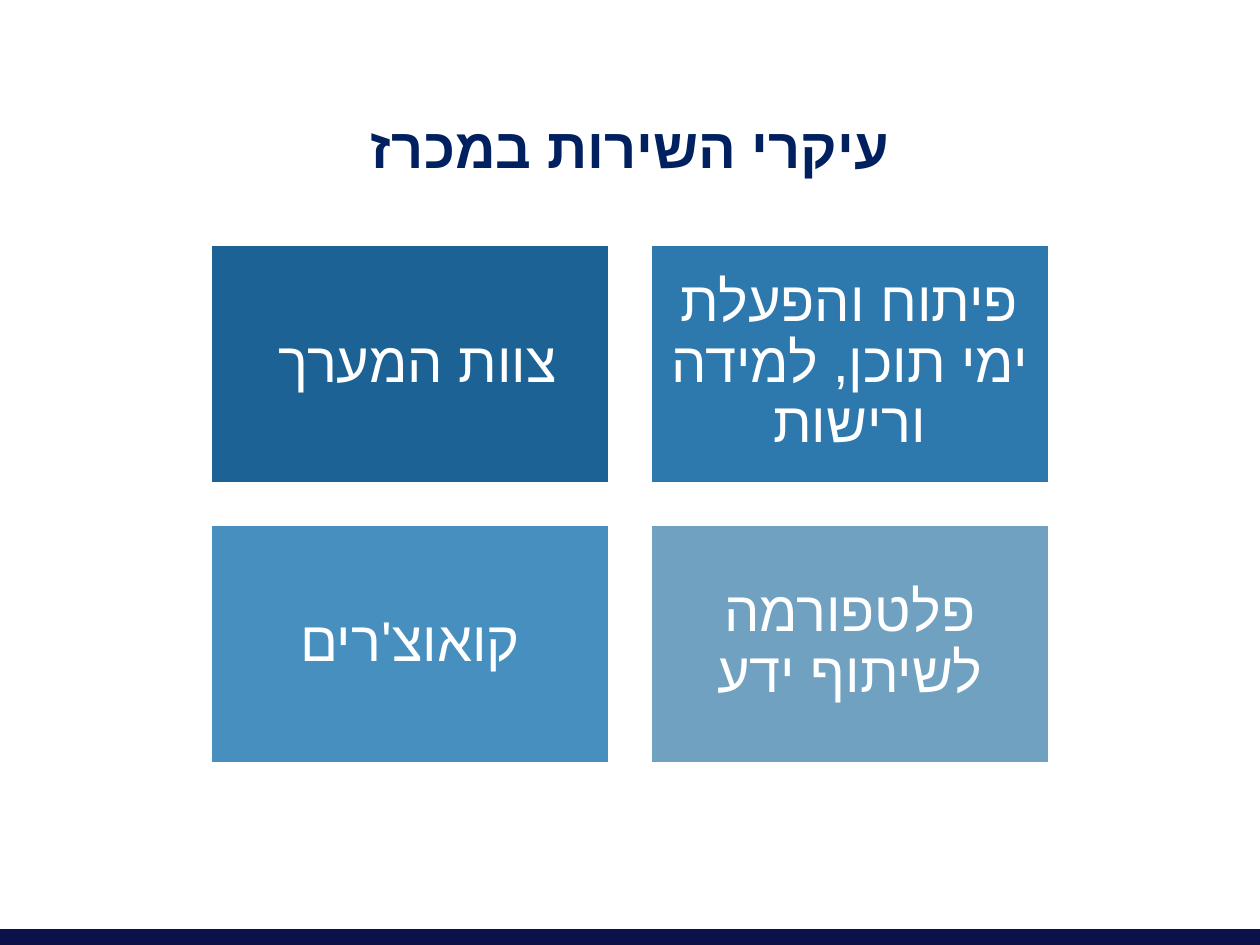
"""Builds a slide with a title and a two-by-two grid of service tiles."""
from dataclasses import dataclass

from lxml import etree
from pptx import Presentation
from pptx.dml.color import RGBColor
from pptx.enum.shapes import MSO_SHAPE
from pptx.enum.text import MSO_ANCHOR, PP_ALIGN
from pptx.oxml.ns import qn
from pptx.util import Inches, Pt

RECT = MSO_SHAPE.RECTANGLE
CENTER = PP_ALIGN.CENTER
TOP, MIDDLE = MSO_ANCHOR.TOP, MSO_ANCHOR.MIDDLE


@dataclass(frozen=True)
class Theme:
    """Holds the colours, fonts and type size."""
    font: str = "Roboto"
    hebrew: str = "Arial"
    size: int = 32
    title: str = "002060"
    bar: str = "0B1249"
    white: str = "FFFFFF"


THEME = Theme()
TILES = [
    ("צוות המערך ", "1C6294"),
    ("פיתוח והפעלת ימי תוכן, למידה ורישות", "2D79AD"),
    ("קואוצ'רים", "468FBF"),
    ("פלטפורמה לשיתוף ידע", "70A1C0"),
]
COLS = 2
LEFT, TOP_ROW = 1.67, 1.94
WIDTH, HEIGHT = 3.17, 1.9
GAP = 0.32


def add_text(frame, text, color, anchor, bold=False):
    """Write one centred right-to-left paragraph."""
    frame.word_wrap = True
    frame.vertical_anchor = anchor
    para = frame.paragraphs[0]
    para.alignment = CENTER
    para._p.get_or_add_pPr().set("rtl", "1")
    run = para.add_run()
    run.text = text
    font = run.font
    font.name, font.size, font.bold = THEME.font, Pt(THEME.size), bold
    font.color.rgb = RGBColor.from_string(color)
    props = run._r.get_or_add_rPr()
    props.set("lang", "he-IL")
    etree.SubElement(props, qn("a:cs")).set("typeface", THEME.hebrew)
    return para


def add_box(slide, left, top, width, height, fill, line, weight):
    """Draw a filled rectangle with an outline."""
    box = slide.shapes.add_shape(
        RECT, Inches(left), Inches(top), Inches(width), Inches(height))
    box.shadow.inherit = False
    box.fill.solid()
    box.fill.fore_color.rgb = RGBColor.from_string(fill)
    box.line.color.rgb = RGBColor.from_string(line)
    box.line.width = Pt(weight)
    return box


def add_title(slide, text):
    """Place the slide title."""
    box = slide.shapes.add_textbox(
        Inches(0.5), Inches(0.84), Inches(9), Inches(0.72))
    add_text(box.text_frame, text, THEME.title, TOP, bold=True)


def add_tile(slide, index, text, fill):
    """Place one tile of the grid."""
    row, col = divmod(index, COLS)
    left = LEFT + col * (WIDTH + GAP)
    top = TOP_ROW + row * (HEIGHT + GAP)
    tile = add_box(slide, left, top, WIDTH, HEIGHT, fill, THEME.white, 2)
    frame = tile.text_frame
    frame.margin_left = frame.margin_right = Inches(0.13)
    frame.margin_top = frame.margin_bottom = Inches(0.13)
    add_text(frame, text, THEME.white, MIDDLE).line_spacing = 0.9


def main():
    """Build and save the slide."""
    deck = Presentation()
    deck.slide_width, deck.slide_height = Inches(10), Inches(7.5)
    slide = deck.slides.add_slide(deck.slide_layouts[6])
    add_box(slide, 0, 7.38, 10, 0.12, THEME.bar, THEME.bar, 0.75)
    add_title(slide, "עיקרי השירות במכרז")
    for index, (text, fill) in enumerate(TILES):
        add_tile(slide, index, text, fill)
    deck.save("out.pptx")


if __name__ == "__main__":
    main()
